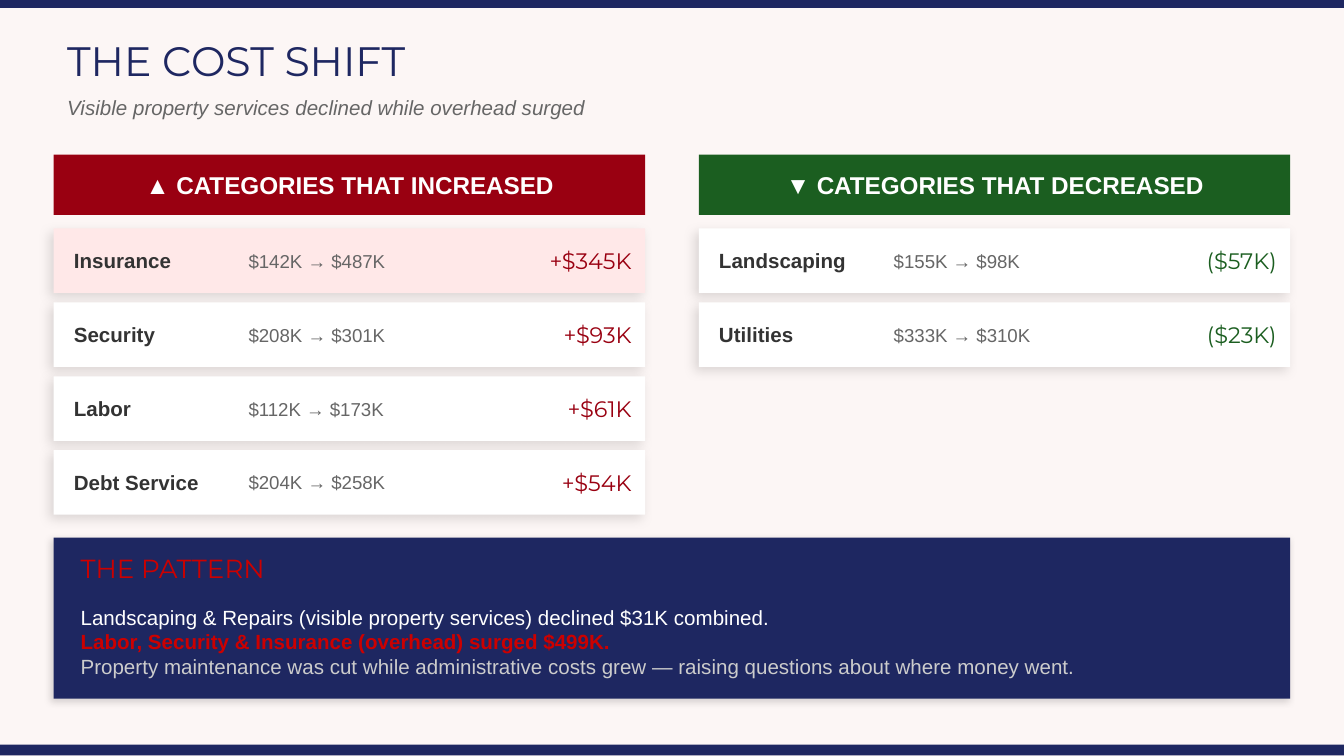
import pptx
import pptx.util
import pptx.dml.color
import pptx.enum.shapes
import pptx.enum.text
import pptx.oxml
import pptx.oxml.ns

Inches = pptx.util.Inches
Align = pptx.enum.text.PP_ALIGN
HEX = {
    "navy": "1E2761", "cream": "FCF6F5", "red": "990011", "green": "1B5E20",
    "pink": "FFE8E8", "white": "FFFFFF", "ink": "333333", "gray": "666666",
    "alert": "CC0000", "pale": "CCCCCC",
}
RGB = {name: pptx.dml.color.RGBColor.from_string(code) for name, code in HEX.items()}

deck = pptx.Presentation()
deck.slide_width, deck.slide_height = Inches(10), Inches(10 * 9 / 16)
slide = deck.slides.add_slide(deck.slide_layouts[5])
slide.background.fill.solid()
slide.background.fill.fore_color.rgb = RGB["cream"]


def block(at, color, shadow=None):
    """Draw a plain rectangle; shadow is (opacity in %, blur, distance) in points."""
    shape = slide.shapes.add_shape(pptx.enum.shapes.MSO_SHAPE.RECTANGLE, *map(Inches, at))
    shape.shadow.inherit = False
    shape.fill.solid()
    shape.fill.fore_color.rgb = RGB[color]
    shape.line.fill.background()
    if shadow:
        alpha, blur, dist = shadow
        glow = pptx.oxml.parse_xml(
            f'<a:outerShdw {pptx.oxml.ns.nsdecls("a")} blurRad="{pptx.util.Pt(blur)}" '
            f'dist="{pptx.util.Pt(dist)}" dir="{135 * 60000}" algn="bl" rotWithShape="0">'
            f'<a:srgbClr val="000000"><a:alpha val="{alpha * 1000}"/></a:srgbClr>'
            '</a:outerShdw>')
        shape._element.spPr.find(pptx.oxml.ns.qn("a:effectLst")).append(glow)


def write(text, at=None, box=None, size=11, font="Arial", color="ink",
          bold=False, italic=False, align=Align.LEFT):
    """Add a paragraph to box, or to a new text box, placed at the given spot."""
    if box is None:
        box = slide.shapes.add_textbox(0, 0, 0, 0)
    frame = box.text_frame
    if at:
        box.left, box.top, box.width, box.height = map(Inches, at)
        frame.margin_left = frame.margin_right = 0
        frame.margin_top = frame.margin_bottom = 0
    frame.word_wrap = True
    frame.auto_size = pptx.enum.text.MSO_AUTO_SIZE.NONE
    frame.vertical_anchor = pptx.enum.text.MSO_ANCHOR.MIDDLE
    para = frame.add_paragraph() if frame.text else frame.paragraphs[0]
    para.alignment = align
    run = para.add_run()
    run.text = text
    run.font.size = pptx.util.Pt(size)
    run.font.name = font
    run.font.color.rgb = RGB[color]
    run.font.bold, run.font.italic = bold, italic
    return box


# Frame and heading
block((0, 0, 10, 0.06), "navy")
write("THE COST SHIFT", (0.5, 0.2, 9, 0.5), slide.shapes.title,
      size=22, font="Montserrat", color="navy")
write("Visible property services declined while overhead surged",
      (0.5, 0.65, 9, 0.3), color="gray", italic=True)

# Two columns of cost cards
columns = [
    (0.4, "red", "▲ CATEGORIES THAT INCREASED", [
        ("Insurance", "$142K → $487K", "+$345K", "pink"),
        ("Security", "$208K → $301K", "+$93K", "white"),
        ("Labor", "$112K → $173K", "+$61K", "white"),
        ("Debt Service", "$204K → $258K", "+$54K", "white"),
    ]),
    (5.2, "green", "▼ CATEGORIES THAT DECREASED", [
        ("Landscaping", "$155K → $98K", "($57K)", "white"),
        ("Utilities", "$333K → $310K", "($23K)", "white"),
    ]),
]
high = 0.48
for left, tone, head, rows in columns:
    bar = (left, 1.15, 4.4, 0.45)
    block(bar, tone)
    write(head, bar, size=13, color="white", bold=True, align=Align.CENTER)
    for i, (name, span, change, fill) in enumerate(rows):
        top = 1.7 + 0.55 * i
        block((left, top, 4.4, high), fill, shadow=(12, 6, 3))
        write(name, (left + 0.15, top, 1.3, high), bold=True)
        write(span, (left + 1.45, top, 1.7, high), size=10, color="gray")
        write(change, (left + 3.2, top, 1.1, high), size=12, font="Montserrat",
              color=tone, align=Align.RIGHT)

# Closing panel
block((0.4, 4, 9.2, 1.2), "navy", shadow=(15, 4, 2))
write("THE PATTERN", (0.6, 4.05, 8.8, 0.35), size=14, font="Montserrat", color="alert")
note = write("Landscaping & Repairs (visible property services) declined $31K combined.",
             (0.6, 4.4, 8.8, 0.75), color="white")
write("Labor, Security & Insurance (overhead) surged $499K.",
      box=note, color="alert", bold=True)
write("Property maintenance was cut while administrative costs grew — "
      "raising questions about where money went.", box=note, color="pale")
block((0, 5.54, 10, 0.08), "navy")

deck.save("out.pptx")
